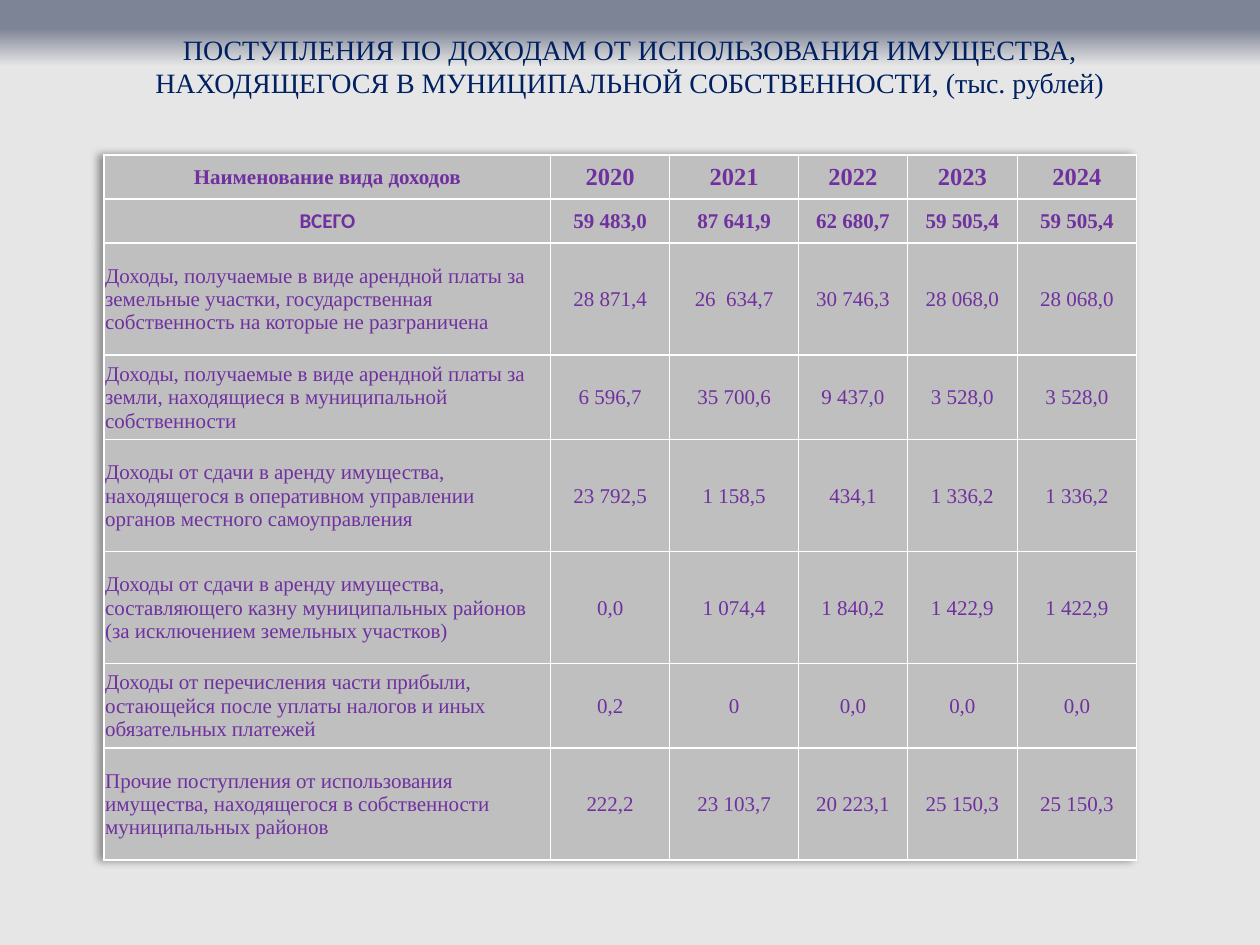
from lxml import etree
from pptx import Presentation
from pptx.dml.color import RGBColor
from pptx.enum.text import MSO_ANCHOR, PP_ALIGN
from pptx.oxml import parse_xml
from pptx.oxml.ns import nsdecls, qn
from pptx.util import Cm, Pt

MIDDLE = MSO_ANCHOR.MIDDLE
LEFT, CENTER = PP_ALIGN.LEFT, PP_ALIGN.CENTER

TITLE = ("ПОСТУПЛЕНИЯ ПО ДОХОДАМ ОТ ИСПОЛЬЗОВАНИЯ ИМУЩЕСТВА, НАХОДЯЩЕГОСЯ "
         "В МУНИЦИПАЛЬНОЙ СОБСТВЕННОСТИ, (тыс. рублей)")
GRADIENT = [(0, "7D8496"), (3, "7D8496"), (7, "E6E6E6"), (100, "E6E6E6")]
COL_WIDTHS = [9, 2.4, 2.6, 2.19, 2.22, 2.4]
ROW_HEIGHTS = [0.89, 0.89, 2.26, 1.7, 2.26, 2.26, 1.7, 2.26]
INCOME = [
    ("Наименование вида доходов", "2020", "2021", "2022", "2023", "2024"),
    ("ВСЕГО", "59 483,0", "87 641,9", "62 680,7", "59 505,4", "59 505,4"),
    ("Доходы, получаемые в виде арендной платы за земельные участки, "
     "государственная собственность на которые не разграничена",
     "28 871,4", "26  634,7", "30 746,3", "28 068,0", "28 068,0"),
    ("Доходы, получаемые в виде арендной платы за земли, "
     "находящиеся в муниципальной собственности",
     "6 596,7", "35 700,6", "9 437,0", "3 528,0", "3 528,0"),
    ("Доходы от сдачи в аренду имущества, находящегося в оперативном "
     "управлении органов местного самоуправления",
     "23 792,5", "1 158,5", "434,1", "1 336,2", "1 336,2"),
    ("Доходы от сдачи в аренду имущества, составляющего казну "
     "муниципальных районов (за исключением земельных участков)",
     "0,0", "1 074,4", "1 840,2", "1 422,9", "1 422,9"),
    ("Доходы от перечисления части прибыли, остающейся после уплаты "
     "налогов и иных обязательных платежей",
     "0,2", "0", "0,0", "0,0", "0,0"),
    ("Прочие поступления от использования имущества, находящегося "
     "в собственности муниципальных районов",
     "222,2", "23 103,7", "20 223,1", "25 150,3", "25 150,3"),
]


def rgb(value):
    return RGBColor.from_string(value)


class IncomeSlide:
    """Holds the style of the income slide and draws its elements."""

    font, total_font = "Times New Roman", "Calibri"
    title_color, text_color = "002060", "7030A0"
    cell_fill, border = "BFBFBF", "FFFFFF"

    def __init__(self, prs):
        self.s = prs.slides.add_slide(prs.slide_layouts[5])

    def background(self, stops):
        fill = self.s.background.fill
        fill.gradient()
        fill.gradient_angle = 270
        gs_list = self.s.element.find(".//" + qn("a:gsLst"))
        gs_list[:] = []
        for percent, color in stops:
            gs = etree.SubElement(gs_list, qn("a:gs"), pos=str(percent * 1000))
            etree.SubElement(gs, qn("a:srgbClr"), val=color)

    def format_text(self, tf, size, color, font, bold=False, align=CENTER):
        for p in tf.paragraphs:
            p.alignment = align
            for r in p.runs:
                r.font.name = font
                r.font.size = Pt(size)
                r.font.bold = bold
                r.font.color.rgb = rgb(color)

    def title(self, text, left, top, width, height):
        sp = self.s.shapes.title
        sp.left, sp.top, sp.width, sp.height = map(Cm, (left, top, width, height))
        tf = sp.text_frame
        tf.text = text
        tf.word_wrap = True
        tf.vertical_anchor = MIDDLE
        self.format_text(tf, 16, self.title_color, self.font)

    def cell(self, cell, text, row, col):
        cell.text = text
        cell.vertical_anchor = MIDDLE
        cell.margin_left = cell.margin_right = cell.margin_top = Cm(0.02)
        cell.margin_bottom = 0
        tc_pr = cell._tc.get_or_add_tcPr()
        for side in "LRTB":
            tc_pr.append(parse_xml(
                f'<a:ln{side} {nsdecls("a")} w="12700"><a:solidFill>'
                f'<a:srgbClr val="{self.border}"/></a:solidFill></a:ln{side}>'))
        cell.fill.solid()
        cell.fill.fore_color.rgb = rgb(self.cell_fill)
        self.format_text(
            cell.text_frame,
            size=14 if row == 0 and col else 12,
            color=self.text_color,
            font=self.total_font if (row, col) == (1, 0) else self.font,
            bold=row < 2,
            align=LEFT if row > 1 and col == 0 else CENTER)

    def table(self, rows, left, top, widths, heights):
        frame = self.s.shapes.add_table(
            len(rows), len(widths), Cm(left), Cm(top),
            Cm(sum(widths)), Cm(sum(heights)))
        table = frame.table
        table.horz_banding = False
        table._tbl.tblPr.insert(0, parse_xml(
            f'<a:effectLst {nsdecls("a")}><a:outerShdw blurRad="50800" '
            'dist="38100" dir="10800000" algn="r" rotWithShape="0">'
            '<a:srgbClr val="000000"><a:alpha val="40000"/></a:srgbClr>'
            '</a:outerShdw></a:effectLst>'))
        for column, width in zip(table.columns, widths):
            column.width = Cm(width)
        for i, (values, height) in enumerate(zip(rows, heights)):
            table.rows[i].height = Cm(height)
            for j, text in enumerate(values):
                self.cell(table.cell(i, j), text, i, j)


def main():
    prs = Presentation()
    prs.slide_width, prs.slide_height = Cm(25.4), Cm(19.05)
    slide = IncomeSlide(prs)
    slide.background(GRADIENT)
    slide.title(TITLE, 1.27, 0.33, 22.86, 2)
    slide.table(INCOME, 2.1, 3.12, COL_WIDTHS, ROW_HEIGHTS)
    prs.save("out.pptx")


if __name__ == "__main__":
    main()
